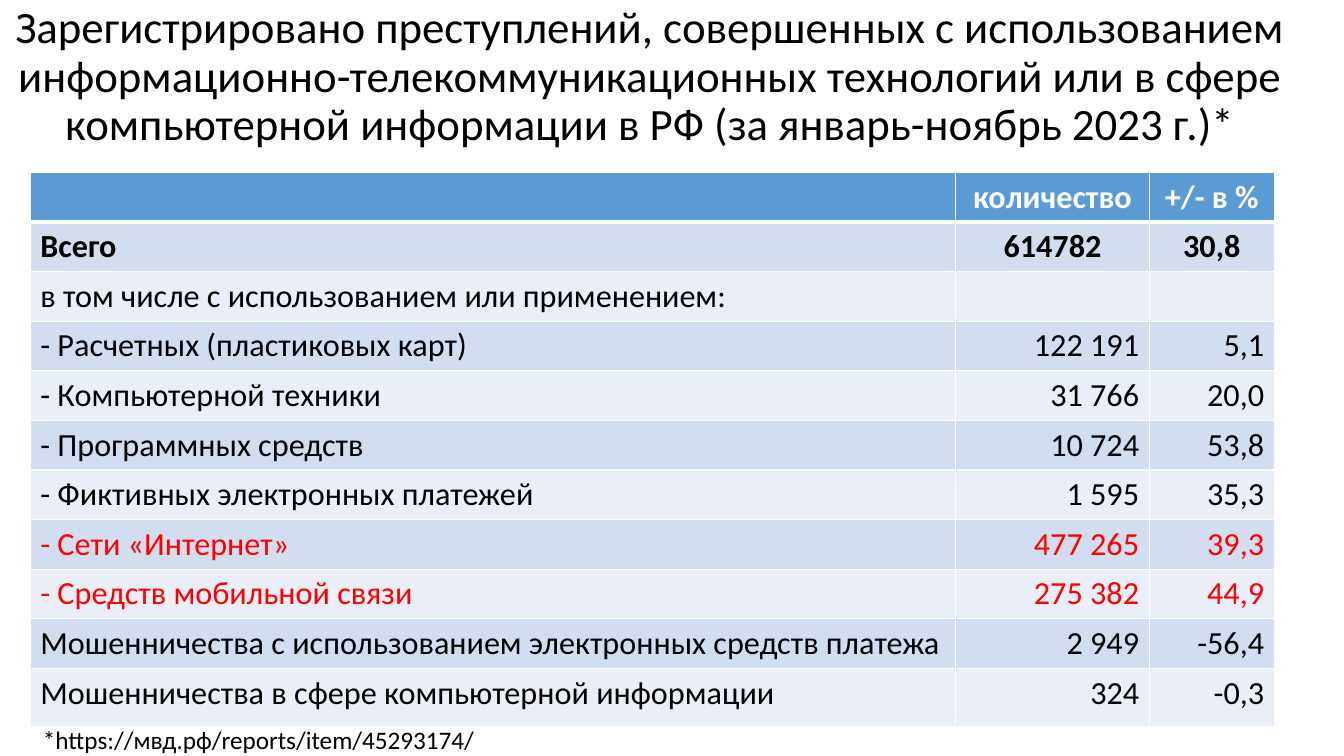
from lxml import etree
from pptx import Presentation
from pptx.dml.color import RGBColor
from pptx.enum.text import MSO_ANCHOR, MSO_AUTO_SIZE, PP_ALIGN
from pptx.oxml.ns import qn
from pptx.util import Inches, Pt

LEFT, MID, RIGHT = PP_ALIGN.LEFT, PP_ALIGN.CENTER, PP_ALIGN.RIGHT
TOP = MSO_ANCHOR.TOP
NO_FIT, GROW = MSO_AUTO_SIZE.NONE, MSO_AUTO_SIZE.SHAPE_TO_FIT_TEXT

COLORS = {
    "white": "FFFFFF",
    "black": "000000",
    "red": "FF0000",
    "head": "5B9BD5",
    "odd": "D2DEEF",
    "even": "EAEFF7",
}

TITLE = (
    "Зарегистрировано преступлений, совершенных с использованием "
    "информационно-телекоммуникационных технологий или в сфере "
    "компьютерной информации в РФ (за январь-ноябрь 2023 г.)*"
)
NOTE = "*https://мвд.рф/reports/item/45293174/"

COLS = [9.18, 1.92, 1.24]
ROW, LAST = 0.49, 0.58
HEAD, TOTAL = 0, 1
HOT = (7, 8)
ROWS = [
    ("", "количество", "+/- в %"),
    ("Всего", "614782", "30,8"),
    ("в том числе с использованием или применением:", "", ""),
    ("- Расчетных (пластиковых карт)", "122 191", "5,1"),
    ("- Компьютерной техники", "31 766", "20,0"),
    ("- Программных средств", "10 724", "53,8"),
    ("- Фиктивных электронных платежей", "1 595", "35,3"),
    ("- Сети «Интернет»", "477 265", "39,3"),
    ("- Средств мобильной связи", "275 382", "44,9"),
    ("Мошенничества с использованием электронных средств платежа", "2 949", "-56,4"),
    ("Мошенничества в сфере компьютерной информации", "324", "-0,3"),
]


def rgb(name):
    return RGBColor.from_string(COLORS[name])


def write(frame, text, size=23, color="black", bold=False, align=LEFT, space=None):
    para = frame.paragraphs[0]
    para.alignment = align
    para.line_spacing = space
    para.font.size = Pt(size)
    if text:
        run = para.add_run()
        run.text = text
        font = run.font
        font.name, font.size, font.bold = "Calibri", Pt(size), bold
        font.color.rgb = rgb(color)


def edge(cell, side, width):
    props = cell._tc.get_or_add_tcPr()
    line = etree.SubElement(props, qn(f"a:ln{side}"), w=str(Pt(width)))
    fill = etree.SubElement(line, qn("a:solidFill"))
    etree.SubElement(fill, qn("a:srgbClr"), val=COLORS["white"])


def add_title(slide):
    title = slide.shapes.title
    title.left, title.top = Inches(0), Inches(0)
    title.width, title.height = Inches(12.9), Inches(1.71)
    frame = title.text_frame
    frame.auto_size, frame.vertical_anchor = NO_FIT, TOP
    write(frame, TITLE, size=32, align=MID, space=0.9)


def fill_cell(cell, text, row, col):
    # Borders come before the fill in the cell's properties
    for side in "LRTB":
        thick = (row, side) in ((HEAD, "B"), (TOTAL, "T"))
        edge(cell, side, 3 if thick else 1)
    band = "head" if row == HEAD else "odd" if row % 2 else "even"
    cell.fill.solid()
    cell.fill.fore_color.rgb = rgb(band)

    # Text: bold centred top rows, right-aligned figures below
    color = "white" if row == HEAD else "red" if row in HOT else "black"
    align = LEFT if col == 0 else MID if row <= TOTAL else RIGHT
    write(cell.text_frame, text, color=color, bold=row <= TOTAL, align=align)


def add_grid(slide):
    high = ROW * (len(ROWS) - 1) + LAST
    table = slide.shapes.add_table(
        len(ROWS), len(COLS), Inches(0.3), Inches(1.71),
        Inches(sum(COLS)), Inches(high),
    ).table
    table.first_row = table.horz_banding = False
    for col, width in zip(table.columns, COLS):
        col.width = Inches(width)
    for row, texts in enumerate(ROWS):
        table.rows[row].height = Inches(LAST if row == len(ROWS) - 1 else ROW)
        for col, text in enumerate(texts):
            fill_cell(table.cell(row, col), text, row, col)


def add_note(slide):
    box = slide.shapes.add_textbox(Inches(0.3), Inches(7.14), Inches(4.53), Inches(0.4))
    frame = box.text_frame
    frame.word_wrap, frame.auto_size = False, GROW
    write(frame, NOTE, size=18, align=MID)


def main():
    deck = Presentation()
    deck.slide_width, deck.slide_height = Inches(13.33), Inches(7.5)
    slide = deck.slides.add_slide(deck.slide_layouts[5])
    add_title(slide)
    add_grid(slide)
    add_note(slide)
    deck.save("out.pptx")


if __name__ == "__main__":
    main()
